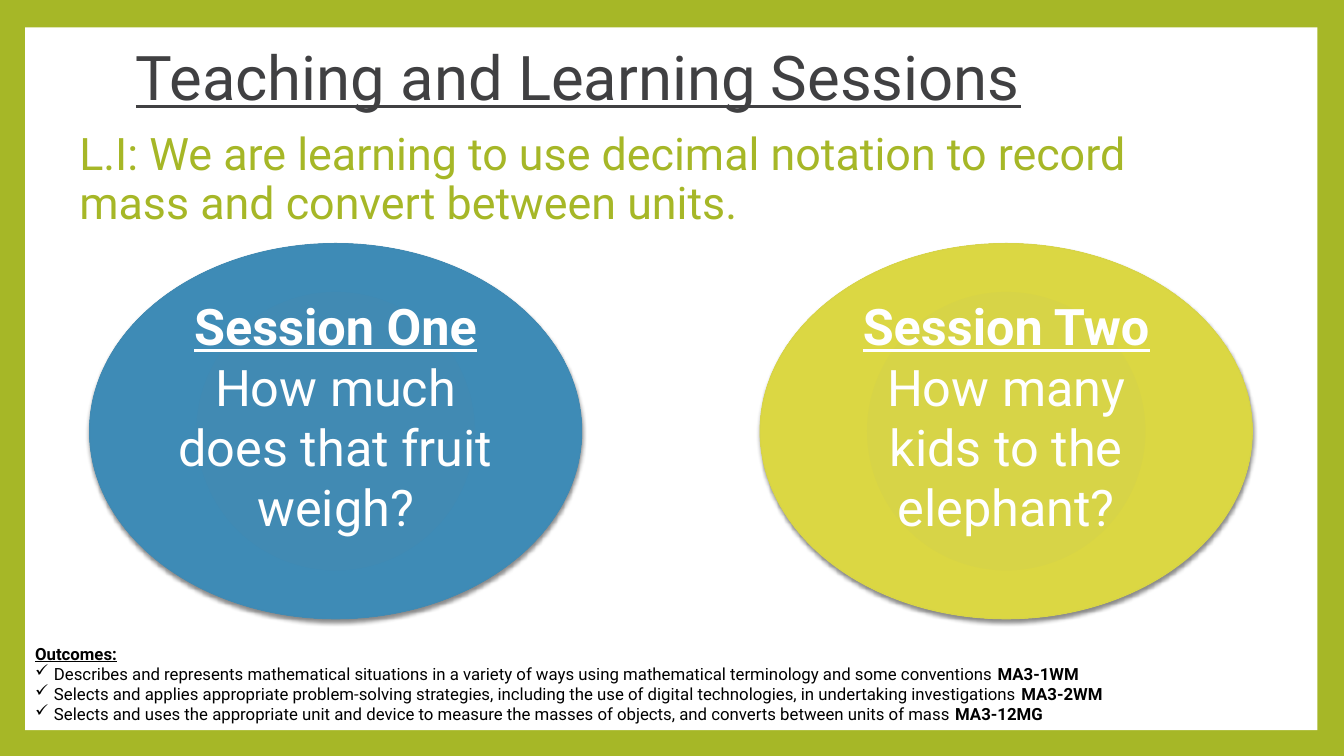
import lxml.etree
import pptx
import pptx.dml.color
import pptx.enum.shapes
import pptx.enum.text
import pptx.oxml
import pptx.oxml.ns
import pptx.util

Pt = pptx.util.Pt
ALIGN = pptx.enum.text.PP_ALIGN
ANCHOR = pptx.enum.text.MSO_ANCHOR
SHAPE = pptx.enum.shapes.MSO_SHAPE
qn = pptx.oxml.ns.qn

COLORS = {
    "green": "A6B727", "white": "FFFFFF", "charcoal": "404042", "black": "000000",
    "blue": "418AB3", "blue_mid": "3E8BB6", "blue_end": "3180AD",
    "lime": "D7D447", "lime_mid": "DBD743", "lime_end": "D0CD33",
}
SESSIONS = [
    ("Session One", "How much does that fruit weigh?", "blue"),
    ("Session Two", "How many kids to the elephant?", "lime"),
]
OUTCOMES = [
    ("Describes and represents mathematical situations in a variety of ways using "
     "mathematical terminology and some conventions ", "MA3-1WM"),
    ("Selects and applies appropriate problem-solving strategies, including the use of "
     "digital technologies, in undertaking investigations ", "MA3-2WM"),
    ("Selects and uses the appropriate unit and device to measure the masses of objects, "
     "and converts between units of mass ", "MA3-12MG"),
]


def rgb(name):
    """Return the named palette colour."""
    return pptx.dml.color.RGBColor.from_string(COLORS[name])


def add_text(paragraph, text, size=12, color="black", bold=False, underline=False):
    """Append a formatted run to a paragraph."""
    run = paragraph.add_run()
    run.text = text
    run.font.name = "Roboto"
    run.font.size = Pt(size)
    run.font.bold = bold
    run.font.underline = underline
    run.font.color.rgb = rgb(color)


def add_frame(slide, box, anchor=ANCHOR.TOP):
    """Add a wrapping text box and return its text frame."""
    frame = slide.shapes.add_textbox(*map(Pt, box)).text_frame
    frame.word_wrap = True
    frame.vertical_anchor = anchor
    return frame


def set_indent(paragraph, left, first=0):
    """Set the left and first-line indents of a paragraph."""
    properties = paragraph._p.get_or_add_pPr()
    properties.set("marL", str(Pt(left)))
    properties.set("indent", str(Pt(first)))
    return properties


def add_panel(slide, box):
    """Draw the white panel inside the green border."""
    background = slide.background.fill
    background.solid()
    background.fore_color.rgb = rgb("green")
    panel = slide.shapes.add_shape(SHAPE.RECTANGLE, *map(Pt, box))
    panel.shadow.inherit = False
    panel.fill.solid()
    panel.fill.fore_color.rgb = rgb("white")
    panel.line.fill.background()


def add_title(slide, box):
    """Write the underlined slide title."""
    paragraph = add_frame(slide, box, ANCHOR.MIDDLE).paragraphs[0]
    paragraph.line_spacing = 0.9
    add_text(paragraph, "Teaching and Learning Sessions", size=44, color="charcoal", underline=True)


def add_intention(slide, box):
    """Write the learning intention."""
    paragraph = add_frame(slide, box).paragraphs[0]
    paragraph.line_spacing = 0.9
    paragraph.space_before = Pt(14)
    set_indent(paragraph, 3.6)
    add_text(paragraph, "L.I: We are learning to use decimal notation to record mass and "
             "convert between units.", size=32, color="green")


def add_outcomes(slide, box):
    """Write the ticked list of outcomes with bold codes."""
    frame = add_frame(slide, box)
    add_text(frame.paragraphs[0], "Outcomes:", bold=True, underline=True)
    for description, code in OUTCOMES:
        paragraph = frame.add_paragraph()
        properties = set_indent(paragraph, 13.5, -13.5)
        bullet = lxml.etree.SubElement(properties, qn("a:buChar"))
        bullet.set("char", "✓")
        add_text(paragraph, description)
        add_text(paragraph, code, bold=True)


def style_ellipse(shape, color):
    """Give an ellipse its radial gradient, outline and soft shadow."""
    namespace = pptx.oxml.ns.nsdecls("a")
    names = ((0, color), (90, color + "_mid"), (100, color + "_end"))
    stops = "".join(
        f'<a:gs pos="{position * 1000}"><a:srgbClr val="{COLORS[name]}"/></a:gs>'
        for position, name in names)
    gradient = pptx.oxml.parse_xml(
        f'<a:gradFill {namespace} rotWithShape="1"><a:gsLst>{stops}</a:gsLst>'
        '<a:path path="circle"><a:fillToRect l="100000" t="100000" r="100000" b="100000"/>'
        '</a:path></a:gradFill>')
    shadow = pptx.oxml.parse_xml(
        f'<a:outerShdw {namespace} blurRad="{Pt(3)}" dist="{Pt(2)}" dir="5400000" '
        f'rotWithShape="0"><a:srgbClr val="{COLORS["black"]}"><a:alpha val="45000"/>'
        '</a:srgbClr></a:outerShdw>')
    shape.line.color.rgb = rgb(color)
    shape.line.width = Pt(0.79)
    shape.shadow.inherit = False
    properties = shape._element.spPr
    properties.find(qn("a:prstGeom")).addnext(gradient)
    properties.find(qn("a:effectLst")).append(shadow)


def add_session(slide, box, heading, question, color):
    """Draw one session ellipse with its heading and question."""
    shape = slide.shapes.add_shape(SHAPE.OVAL, *map(Pt, box))
    style_ellipse(shape, color)
    frame = shape.text_frame
    frame.word_wrap = True
    frame.vertical_anchor = ANCHOR.MIDDLE
    frame.margin_bottom = Pt(25)
    for index, text in enumerate((heading, question)):
        paragraph = frame.paragraphs[0] if index == 0 else frame.add_paragraph()
        paragraph.alignment = ALIGN.CENTER
        add_text(paragraph, text, size=36, color="white", bold=index == 0, underline=index == 0)


def main():
    """Build and save the presentation."""
    presentation = pptx.Presentation()
    presentation.slide_width, presentation.slide_height = Pt(960), Pt(540)
    slide = presentation.slides.add_slide(presentation.slide_layouts[6])
    add_panel(slide, (18, 19.5, 923, 502))
    add_title(slide, (90, 21.6, 804, 72))
    add_intention(slide, (46, 90.7, 848, 83))
    add_outcomes(slide, (18, 456, 922, 65.5))
    for index, session in enumerate(SESSIONS):
        add_session(slide, (64 + index * 479, 174, 351.5, 268), *session)
    presentation.save("out.pptx")


if __name__ == "__main__":
    main()
